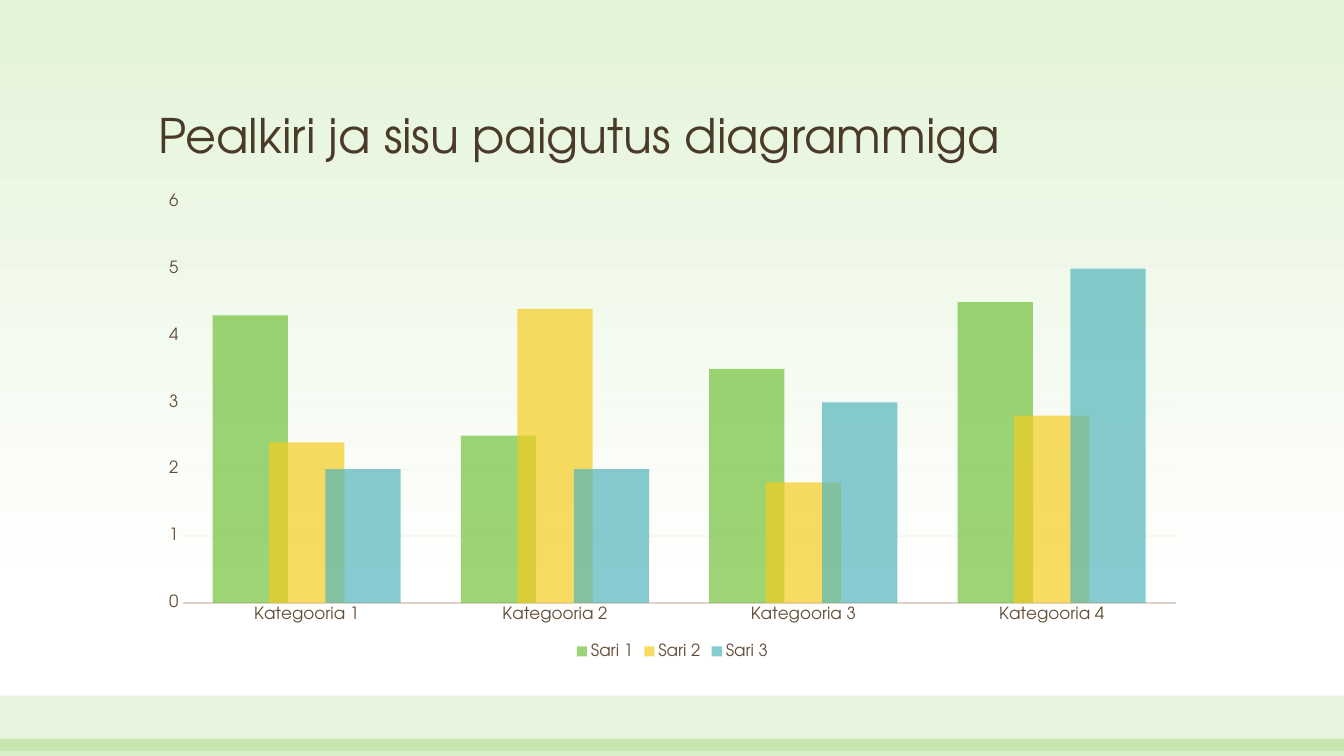
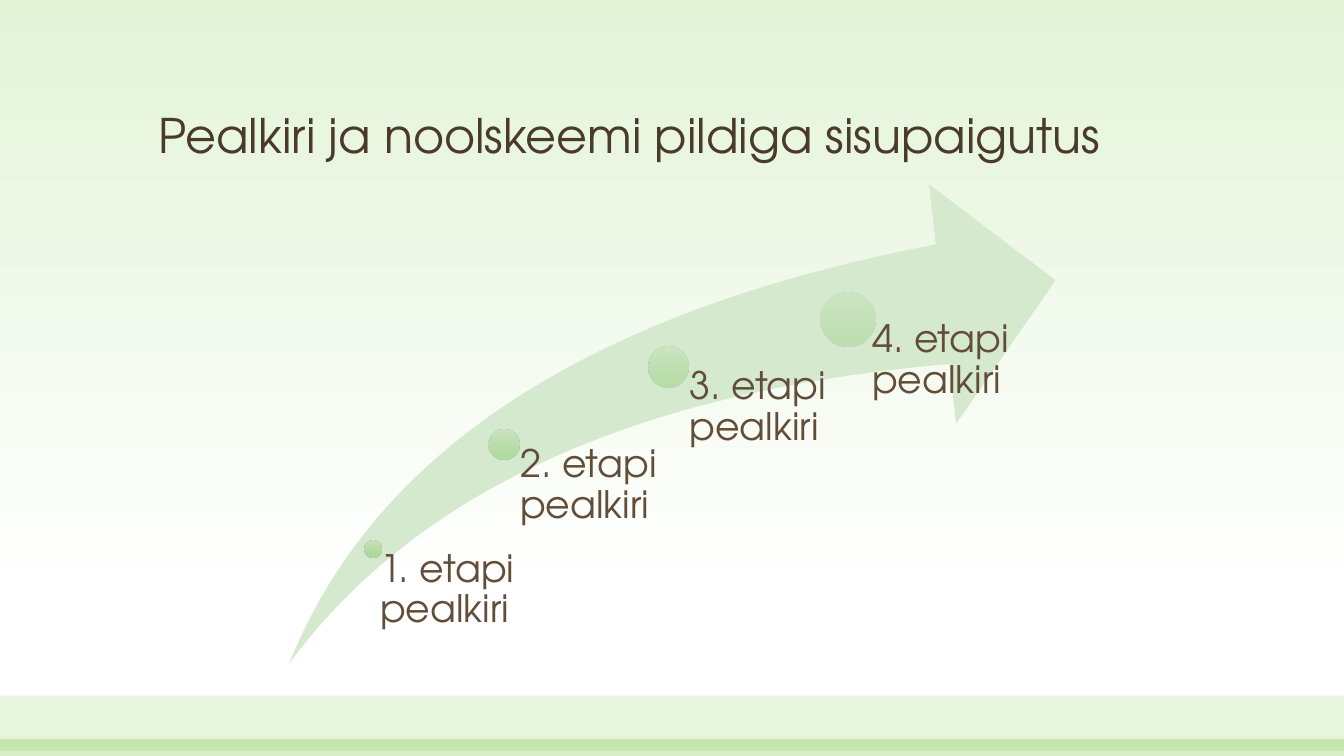
from lxml.etree import SubElement
from pptx import Presentation
from pptx.chart.data import CategoryChartData
from pptx.dml.color import RGBColor
from pptx.enum.chart import XL_CHART_TYPE, XL_LEGEND_POSITION, XL_TICK_MARK
from pptx.enum.shapes import MSO_SHAPE
from pptx.enum.text import MSO_ANCHOR
from pptx.oxml.ns import qn
from pptx.util import Inches, Pt

# Shared look
FONT = "TeX Gyre Adventor"
DARK = RGBColor(0x4A, 0x3A, 0x2A)
BROWN = RGBColor(0x62, 0x4D, 0x38)
GREEN = RGBColor(0x72, 0xC2, 0x3C)
GOLD = RGBColor(0xF4, 0xCC, 0x20)
TEAL = RGBColor(0x53, 0xB6, 0xBB)
PALE = RGBColor(0xE3, 0xF3, 0xD8)
WHITE = RGBColor(0xFF, 0xFF, 0xFF)
SWOOSH = RGBColor(0xD5, 0xE9, 0xCE)
AXIS = RGBColor(0xDF, 0xD2, 0xC6)
GRID = RGBColor(0xF9, 0xF6, 0xF4)
DOT = [
    (0, RGBColor(0xC8, 0xE5, 0xBC)),
    (50, RGBColor(0xB3, 0xDB, 0xA2)),
    (100, RGBColor(0xA4, 0xD7, 0x8D)),
]
WIDE, HIGH = 13.33, 7.5
BODY = (1.47, 1.83, 10.4, 4.75)
BASE = BODY[1] + BODY[3]

# Chart data
CATS = [f"Kategooria {n}" for n in range(1, 5)]
SERIES = [
    ("Sari 1", (4.3, 2.5, 3.5, 4.5), GREEN),
    ("Sari 2", (2.4, 4.4, 1.8, 2.8), GOLD),
    ("Sari 3", (2, 2, 3, 5), TEAL),
]

# Steps: dot centre x, y, size, opacity; text left, width, inset
STEPS = [
    (3.7, 5.45, 0.17, 90, 3.68, 1.56, 0.09),
    (5, 4.41, 0.3, 77, 5, 1.6, 0.16),
    (6.63, 3.64, 0.4, 63, 6.63, 1.6, 0.21),
    (8.41, 3.17, 0.54, 50, 8.36, 1.85, 0.29),
]


def put(item, vals):
    for name, val in vals.items():
        setattr(item, name, val)


def box(*sides):
    return [Inches(side) for side in sides]


def fade(node, pct):
    """Set the opacity of every colour below a node."""
    for tone in node.iter(qn("a:srgbClr")):
        SubElement(tone, qn("a:alpha"), val=str(pct * 1000))


def blend(fill, node, stops):
    """Fill from top to bottom through the given stops."""
    fill.gradient()
    fill.gradient_angle = 270
    ramp = node.find(".//" + qn("a:gsLst"))
    for old in list(ramp):
        ramp.remove(old)
    for pos, tone in stops:
        stop = SubElement(ramp, qn("a:gs"), pos=str(pos * 1000))
        SubElement(stop, qn("a:srgbClr"), val=str(tone))


def shape(slide, kind, place, tone=None):
    item = slide.shapes.add_shape(kind, *box(*place))
    item.shadow.inherit = False
    item.line.fill.background()
    if tone is not None:
        item.fill.solid()
        item.fill.fore_color.rgb = tone
    return item


def label(slide, place, text, size, tone, frame):
    area = slide.shapes.add_textbox(*box(*place)).text_frame
    put(area, {"word_wrap": True, **frame})
    para = area.paragraphs[0]
    para.line_spacing = 0.9
    run = para.add_run()
    run.text = text
    put(run.font, {"name": FONT, "size": Pt(size)})
    run.font.color.rgb = tone


def page(deck, title):
    """Add a slide with background, bottom bands and title."""
    slide = deck.slides.add_slide(deck.slide_layouts[6])
    blend(slide.background.fill, slide.element, [(0, PALE), (79, WHITE)])
    for top, tall, pct in ((6.9, 0.55, 17), (7.33, 0.17, 28)):
        band = shape(slide, MSO_SHAPE.RECTANGLE, (0, top, WIDE, tall), GREEN)
        fade(band.element.spPr, pct)
    label(slide, (1.47, 0.48, 10.4, 1.19), title, 34, DARK,
          {"vertical_anchor": MSO_ANCHOR.BOTTOM})
    return slide


def style(font, size):
    put(font, {"name": FONT, "size": Pt(size)})
    font.color.rgb = BROWN


def stroke(line, tone, width):
    line.color.rgb = tone
    line.width = Pt(width)


def columns(slide):
    data = CategoryChartData()
    data.categories = CATS
    for name, vals, _ in SERIES:
        data.add_series(name, vals)
    chart = slide.shapes.add_chart(
        XL_CHART_TYPE.COLUMN_CLUSTERED, *box(*BODY), data).chart
    put(chart, {"has_title": False, "has_legend": True})
    style(chart.font, 10)
    put(chart.legend, {"position": XL_LEGEND_POSITION.BOTTOM,
                       "include_in_layout": False})
    style(chart.legend.font, 12)

    # Columns
    plot = chart.plots[0]
    put(plot, {"gap_width": 80, "overlap": 25, "vary_by_categories": False})
    for ser, (_, _, tone) in zip(plot.series, SERIES):
        ser.format.fill.solid()
        ser.format.fill.fore_color.rgb = tone
        fade(ser._element, 70)

    # Axes
    cat, val = chart.category_axis, chart.value_axis
    for axis in (cat, val):
        put(axis, {"major_tick_mark": XL_TICK_MARK.NONE,
                   "minor_tick_mark": XL_TICK_MARK.NONE})
        style(axis.tick_labels.font, 12)
    stroke(cat.format.line, AXIS, 1.25)
    put(val, {"minimum_scale": 0, "maximum_scale": 6, "major_unit": 1,
              "has_major_gridlines": True})
    val.format.line.fill.background()
    stroke(val.major_gridlines.format.line, GRID, 0.75)


def steps(slide):
    shape_box = (2.87, BODY[1], 7.6, BODY[3])
    arrow = shape(slide, MSO_SHAPE.SWOOSH_ARROW, shape_box, SWOOSH)
    for spot in range(2):
        arrow.adjustments[spot] = 0.25
    for num, (mid, row, size, pct, left, wide, inset) in enumerate(STEPS, 1):
        place = (mid - size / 2, row - size / 2, size, size)
        dot = shape(slide, MSO_SHAPE.OVAL, place)
        blend(dot.fill, dot.element.spPr, DOT)
        fade(dot.element.spPr, pct)
        label(slide, (left, row, wide, BASE - row),
              f"{num}. etapi pealkiri", 27, BROWN,
              {"margin_left": Inches(inset), "margin_top": 0,
               "margin_right": 0, "margin_bottom": 0})


def main():
    deck = Presentation()
    put(deck, {"slide_width": Inches(WIDE), "slide_height": Inches(HIGH)})
    columns(page(deck, "Pealkiri ja sisu paigutus diagrammiga"))
    steps(page(deck, "Pealkiri ja noolskeemi pildiga sisupaigutus"))
    deck.save("out.pptx")


if __name__ == "__main__":
    main()
